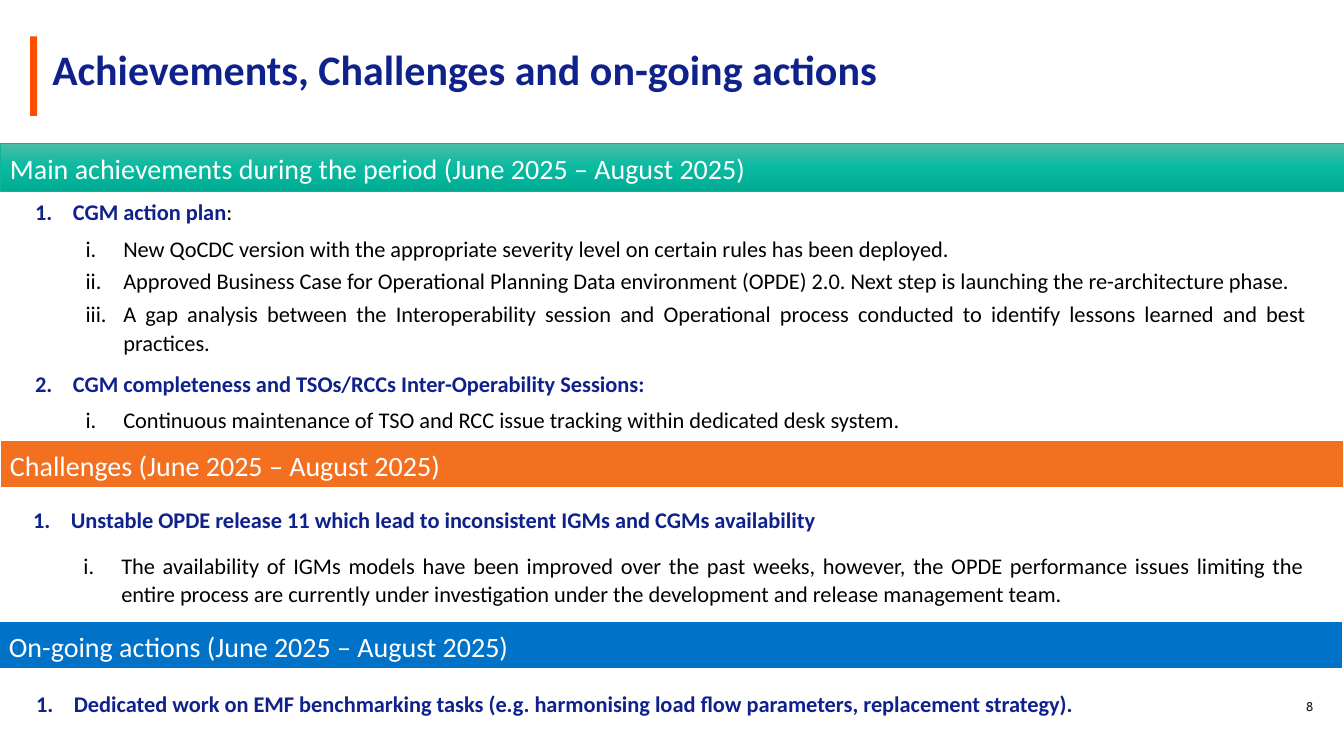
from copy import deepcopy

from lxml.etree import SubElement
from pptx import Presentation
from pptx.dml.color import RGBColor
from pptx.enum.shapes import MSO_SHAPE as Shape
from pptx.enum.text import MSO_ANCHOR as Anchor, PP_ALIGN as Align
from pptx.oxml.ns import qn
from pptx.util import Pt

WHITE = RGBColor(0xFF, 0xFF, 0xFF)
BLACK = RGBColor(0x00, 0x00, 0x00)
INK = RGBColor(0x1D, 0x1D, 0x20)
NAVY = RGBColor(0x0F, 0x21, 0x8B)
ACCENT = RGBColor(0xFF, 0x4D, 0x00)
BLUE = RGBColor(0x00, 0x73, 0xC8)
ORANGE = RGBColor(0xF3, 0x70, 0x20)
GREEN_LINE = RGBColor(0x0F, 0xB2, 0x9A)
GREENS = [RGBColor(0x4C, 0xBD, 0xA7), RGBColor(0x07, 0xBA, 0xA0), RGBColor(0x00, 0xAC, 0x92)]

PERIOD = "(June 2025 – August 2025)"
HEADING = {"size": Pt(16), "name": "Calibri", "bold": True}
DETAIL = {"size": Pt(16), "name": "Calibri", "bold": False}
BAR = {"size": Pt(20), "name": "Calibri"}
TITLE = {"size": Pt(30), "name": "Calibri", "bold": True}
NUMBER = {"size": Pt(9), "name": "Cabin"}

SECTIONS = [
    {
        "bar": (0, 102.24), "label": "Main achievements during the period",
        "fill": GREENS, "line": GREEN_LINE, "line_width": 0.5,
        "body": (18, 136.8, 922.32, 177.84), "before": 0, "after": 3,
        "items": [
            (0, "CGM action plan", ": "),
            (1, "New QoCDC version with the appropriate severity level on certain rules "
                "has been deployed."),
            (1, "Approved Business Case for Operational Planning Data environment (OPDE) 2.0. "
                "Next step is launching the re-architecture phase."),
            (1, "A gap analysis between the Interoperability session and Operational process "
                "conducted to identify lessons learned and best practices."),
            (0, "CGM completeness and TSOs/RCCs Inter-Operability Sessions:"),
            (1, "Continuous maintenance of TSO and RCC issue tracking within dedicated "
                "desk system."),
        ],
    },
    {
        "bar": (0, 313.92), "label": "Challenges",
        "fill": [ORANGE], "line": WHITE, "line_width": 1.5,
        "body": (16.56, 357.12, 922.32, 79.92), "before": 6, "after": 6,
        "items": [
            (0, "Unstable OPDE release 11 which lead to inconsistent IGMs and CGMs availability"),
            (1, "The availability of IGMs models have been improved over the past weeks, however, "
                "the OPDE performance issues limiting the entire process are currently under "
                "investigation under the development and release management team."),
        ],
    },
    {
        "bar": (-0.72, 443.52), "label": "On-going actions",
        "fill": [BLUE], "line": WHITE, "line_width": 1.5,
        "body": (18.72, 488.16, 922.32, 26.64), "before": 6, "after": 6,
        "items": [
            (0, "Dedicated work on EMF benchmarking tasks (e.g. harmonising load flow "
                "parameters, replacement strategy)."),
        ],
    },
]


def add_span(para, text, style, color):
    """Add a run of text with the given font values."""
    span = para.add_run()
    span.text = text
    for name, value in style.items():
        setattr(span.font, name, value)
    span.font.color.rgb = color


def add_box(slide, box):
    """Add a wrapping text box and return its text frame."""
    frame = slide.shapes.add_textbox(*map(Pt, box)).text_frame
    frame.word_wrap = True
    return frame


def add_rectangle(slide, box):
    """Add a rectangle without a shadow."""
    rectangle = slide.shapes.add_shape(Shape.RECTANGLE, *map(Pt, box))
    rectangle.shadow.inherit = False
    return rectangle


def fill_shape(shape, colors):
    """Fill a shape with one colour or a downward gradient of several."""
    fill = shape.fill
    if len(colors) == 1:
        fill.solid()
        fill.fore_color.rgb = colors[0]
        return
    fill.gradient()
    fill.gradient_angle = 270
    stop_list = next(shape.element.iter(qn("a:gsLst")))
    for _ in colors[2:]:
        stop_list.append(deepcopy(stop_list[-1]))
    for index, (stop, color) in enumerate(zip(fill.gradient_stops, colors)):
        stop.position = index / (len(colors) - 1)
        stop.color.rgb = color


def add_line_text(frame, text, style, color, spacing, align=Align.LEFT):
    """Write one vertically centred line in a text frame."""
    frame.vertical_anchor = Anchor.MIDDLE
    para = frame.paragraphs[0]
    para.alignment = align
    para.line_spacing = Pt(spacing)
    add_span(para, text, style, color)


def add_header(slide, box):
    """Add the accent mark and the title beside it."""
    left, top, width, height = box
    mark = add_rectangle(slide, (left, top, 5.04, height))
    fill_shape(mark, [ACCENT])
    mark.line.fill.background()
    frame = add_box(slide, (left + 8.64, top + 10.8, width - 8.64, 28.08))
    add_line_text(frame, "Achievements, Challenges and on-going actions", TITLE, NAVY, 32)


def add_bar(slide, box, section):
    """Add the coloured heading bar of a section."""
    bar = add_rectangle(slide, box)
    fill_shape(bar, section["fill"])
    bar.line.color.rgb = section["line"]
    bar.line.width = Pt(section["line_width"])
    add_line_text(bar.text_frame, f"{section['label']} {PERIOD}", BAR, WHITE, 26)


def add_outline(slide, box, section):
    """Add the numbered two-level list of a section."""
    frame = add_box(slide, box)
    for index, (level, text, *tail) in enumerate(section["items"]):
        para = frame.add_paragraph() if index else frame.paragraphs[0]
        properties = para._p.get_or_add_pPr()
        properties.set("marL", str(Pt(63 if level else 27)))
        properties.set("indent", str(Pt(-27)))
        scheme = "romanLcPeriod" if level else "arabicPeriod"
        SubElement(properties, qn("a:buAutoNum"), type=scheme)
        layout = {
            "level": level,
            "alignment": Align.JUSTIFY,
            "line_spacing": 1.06,
            "space_before": Pt((section["before"] if level else 6) if index else 0),
            "space_after": Pt(section["after"] if level else 6),
        }
        for name, value in layout.items():
            setattr(para, name, value)
        add_span(para, text, DETAIL if level else HEADING, BLACK if level else NAVY)
        for rest in tail:
            add_span(para, rest, DETAIL, BLACK)


def add_page_number(slide, box):
    """Add the page number at the right edge of its box."""
    add_line_text(add_box(slide, box), "8", NUMBER, INK, 9, Align.RIGHT)


def main():
    """Build the slide and save the deck."""
    deck = Presentation()
    deck.slide_width, deck.slide_height = Pt(960), Pt(540)
    slide = deck.slides.add_slide(deck.slide_layouts[6])
    add_page_number(slide, (486, 491.04, 459.36, 28.8))
    add_header(slide, (21.6, 25.92, 923.76, 56.88))
    for section in SECTIONS:
        add_outline(slide, section["body"], section)
        add_bar(slide, (*section["bar"], 960, 34.56), section)
    deck.save("out.pptx")


if __name__ == "__main__":
    main()
